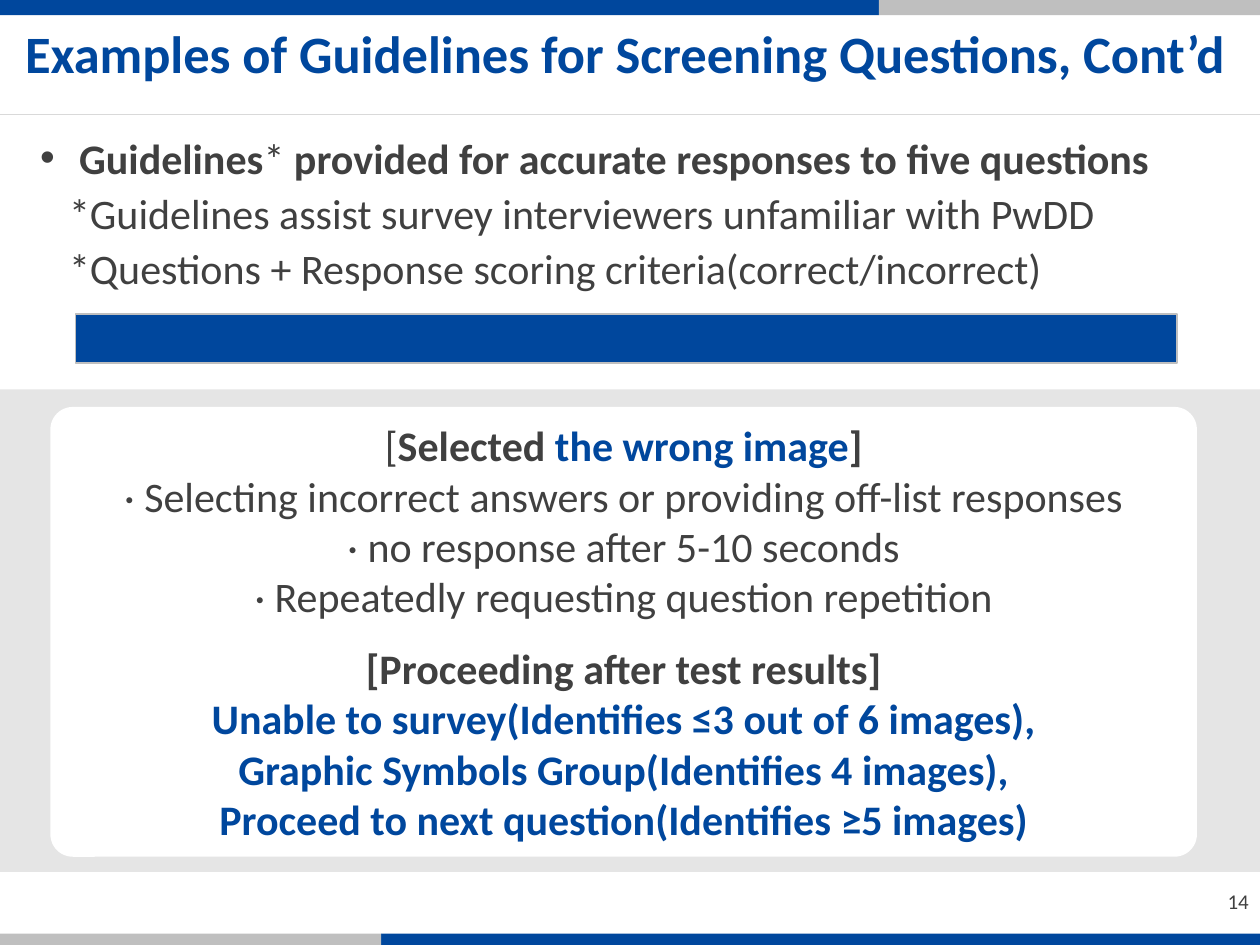
from dataclasses import dataclass
from typing import NamedTuple

from lxml.etree import SubElement
from pptx import Presentation
from pptx.dml.color import RGBColor
from pptx.enum.shapes import MSO_CONNECTOR, MSO_SHAPE
from pptx.enum.text import MSO_ANCHOR, PP_ALIGN
from pptx.oxml.ns import qn
from pptx.util import Inches, Pt


@dataclass(frozen=True)
class Theme:
    font: str = "Calibri"
    blue: str = "00479D"
    grey: str = "BFBFBF"
    rule: str = "D9D9D9"
    dark: str = "404040"
    white: str = "FFFFFF"
    black: str = "000000"
    head: int = 30
    body: int = 24
    note: int = 12


class Box(NamedTuple):
    col: float
    row: float
    cols: float
    rows: float


class Bit(NamedTuple):
    words: str
    bold: bool = False
    ink: str = Theme.dark


@dataclass(frozen=True)
class Para:
    bits: tuple[Bit, ...]
    size: int = Theme.body
    align: PP_ALIGN = PP_ALIGN.LEFT
    space: float = 1.0
    before: float = 0
    left: float = 0
    bullet: str = ""


@dataclass(frozen=True)
class Block:
    box: Box
    fill: str
    form: MSO_SHAPE = MSO_SHAPE.RECTANGLE
    line: str = ""
    alpha: int = 100
    round: float = 0


WIDE, HIGH = Inches(10), Inches(7.5)
COLS, ROWS = 100, 75
EDGE = 69.75
STRIP = 1.3
BASE = 74.1

theme = Theme()
deck = Presentation()
deck.slide_width, deck.slide_height = WIDE, HIGH
slide = deck.slides.add_slide(deck.slide_layouts[6])
shapes = slide.shapes


def place(box: Box) -> tuple[int, ...]:
    x, y = WIDE / COLS, HIGH / ROWS
    return (round(box.col * x), round(box.row * y),
            round(box.cols * x), round(box.rows * y))


def paint(block: Block):
    shape = shapes.add_shape(block.form, *place(block.box))
    shape.shadow.inherit = False
    shape.fill.solid()
    shape.fill.fore_color.rgb = RGBColor.from_string(block.fill)
    if block.alpha < 100:
        tint = shape.fill._xPr.find(".//" + qn("a:srgbClr"))
        SubElement(tint, qn("a:alpha")).set("val", str(block.alpha * 1000))
    if block.line:
        shape.line.color.rgb = RGBColor.from_string(block.line)
        shape.line.width = Pt(1)
    else:
        shape.line.fill.background()
    if block.round:
        shape.adjustments[0] = block.round
    return shape


def rule(row: float) -> None:
    left, top, wide, _ = place(Box(0, row, COLS, 0))
    line = shapes.add_connector(MSO_CONNECTOR.STRAIGHT, left, top, wide, top)
    line.line.color.rgb = RGBColor.from_string(theme.rule)
    line.line.width = Pt(0.5)
    SubElement(line._element.spPr, qn("a:effectLst"))


def write(shape, paras: list[Para], anchor: MSO_ANCHOR) -> None:
    frame = shape.text_frame
    frame.word_wrap = True
    frame.vertical_anchor = anchor
    frame.text = "\n".join(para.bits[0].words for para in paras)
    for line, para in zip(frame.paragraphs, paras):
        line.alignment = para.align
        line.line_spacing = para.space
        line.space_before = Pt(para.before)
        for bit in para.bits[1:]:
            line.add_run().text = bit.words
        for run, bit in zip(line.runs, para.bits):
            run.font.name = theme.font
            run.font.size = Pt(para.size)
            run.font.bold = bit.bold
            run.font.color.rgb = RGBColor.from_string(bit.ink)
        props = line._p.get_or_add_pPr()
        props.set("marL", str(Inches(para.left)))
        props.set("indent", str(-Inches(para.left) if para.bullet else 0))
        if para.bullet:
            SubElement(props, qn("a:buFont")).set("typeface", "Arial")
            SubElement(props, qn("a:buChar")).set("char", para.bullet)


def label(box: Box, paras: list[Para], anchor=MSO_ANCHOR.TOP) -> None:
    write(shapes.add_textbox(*place(box)), paras, anchor)


def mid(*bits: Bit, before: float = 0) -> Para:
    return Para(bits, align=PP_ALIGN.CENTER, before=before)


def star(words: str) -> Para:
    return Para((Bit(words),), space=1.1, left=0.23)


label(Box(77.6, 69.5, 22.5, 4),
      [Para((Bit("14"),), size=theme.note, align=PP_ALIGN.RIGHT)],
      MSO_ANCHOR.MIDDLE)

for block in (
    Block(Box(COLS - EDGE, BASE, EDGE, STRIP), theme.blue),
    Block(Box(0, BASE, COLS - EDGE, STRIP), theme.grey),
    Block(Box(0, -0.1, EDGE, STRIP), theme.blue),
    Block(Box(EDGE, -0.1, COLS - EDGE, STRIP), theme.grey),
):
    paint(block)

rule(9.1)
label(Box(1, 1.2, 97.9, 6.1), [Para(
    (Bit("Examples of Guidelines for Screening Questions, Cont’d",
         True, theme.blue),), size=theme.head)])
label(Box(2.2, 9.6, 97.8, 14.1), [
    Para((Bit("Guidelines", True), Bit("*"),
          Bit(" provided for accurate responses to five questions", True)),
         space=1.1, left=0.31, bullet="•"),
    star("*Guidelines assist survey interviewers unfamiliar with PwDD"),
    star("*Questions + Response scoring criteria(correct/incorrect)"),
])

paint(Block(Box(6, 24.9, 87.4, 3.9), theme.blue, line=theme.grey))
paint(Block(Box(0, 30.9, COLS, 38.3), theme.black, alpha=10))
card = paint(Block(Box(4, 32.3, 91, 35.7), theme.white,
                   MSO_SHAPE.ROUNDED_RECTANGLE, round=0.05))
signs = ("Selecting incorrect answers or providing off-list responses",
         "no response after 5-10 seconds",
         "Repeatedly requesting question repetition")
steps = ("Unable to survey(Identifies ≤3 out of 6 images),",
         "Graphic Symbols Group(Identifies 4 images),",
         "Proceed to next question(Identifies ≥5 images)")
write(card, [
    mid(Bit("["), Bit("Selected ", True),
        Bit("the wrong image", True, theme.blue), Bit("]", True)),
    *(mid(Bit(f"· {sign}")) for sign in signs),
    mid(Bit("[Proceeding after test results]", True), before=12),
    *(mid(Bit(step, True, theme.blue)) for step in steps),
], MSO_ANCHOR.MIDDLE)

deck.save("out.pptx")
